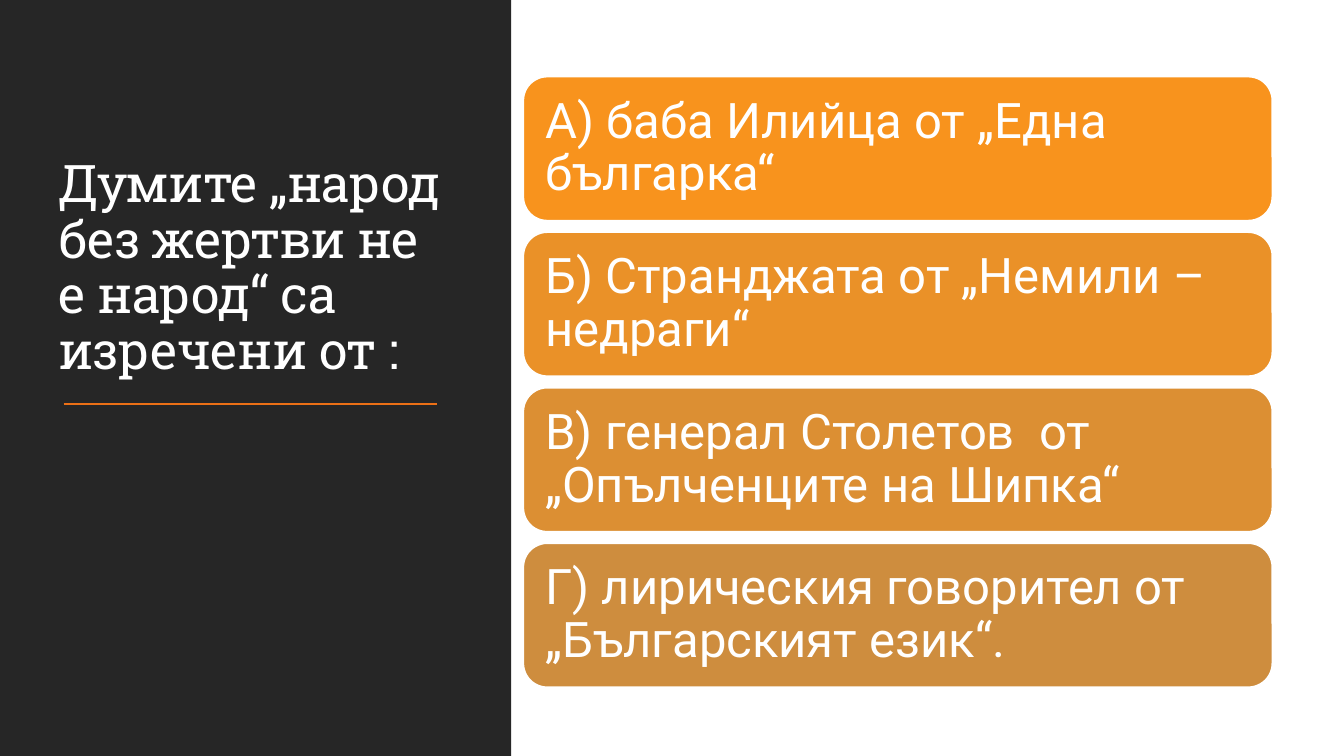
from lxml import etree
from pptx import Presentation
from pptx.dml.color import RGBColor
from pptx.enum.shapes import MSO_CONNECTOR as Connector, MSO_SHAPE as Shape
from pptx.enum.text import MSO_ANCHOR as Anchor, PP_ALIGN as Align
from pptx.oxml.ns import qn
from pptx.util import Inches, Pt

WHITE = RGBColor(0xFF, 0xFF, 0xFF)
CHARCOAL = RGBColor(0x26, 0x26, 0x26)
ORANGE = RGBColor(0xEC, 0x70, 0x16)

QUESTION = "Думите „народ без жертви не е народ“ са изречени от :"
ANSWERS = [
    ("А) баба Илийца от „Една българка“", RGBColor(0xF8, 0x93, 0x1D)),
    ("Б) Странджата от „Немили – недраги“", RGBColor(0xEA, 0x91, 0x28)),
    ("В) генерал Столетов  от „Опълченците на Шипка“", RGBColor(0xDC, 0x8F, 0x33)),
    ("Г) лирическия говорител от „Българският език“.", RGBColor(0xCE, 0x8D, 0x3E)),
]
ANSWER_TOP = 0.76
ANSWER_PITCH = 1.543


def write_text(frame, text, font_name, size, anchor):
    """Fill a frame with one white, left-aligned paragraph and return its run."""
    frame.word_wrap = True
    frame.vertical_anchor = anchor
    frame.text = text
    paragraph = frame.paragraphs[0]
    paragraph.alignment = Align.LEFT
    paragraph.line_spacing = 0.9
    run = paragraph.runs[0]
    run.font.name = font_name
    run.font.size = Pt(size)
    run.font.color.rgb = WHITE
    return run


def add_panel(slide, kind, left, top, width, height, color):
    panel = slide.shapes.add_shape(
        kind, Inches(left), Inches(top), Inches(width), Inches(height))
    panel.shadow.inherit = False
    panel.fill.solid()
    panel.fill.fore_color.rgb = color
    panel.line.fill.background()
    return panel


def add_question(slide):
    question = slide.shapes.add_textbox(
        Inches(0.48), Inches(0.7), Inches(4), Inches(3.13))
    run = write_text(question.text_frame, QUESTION, "Roboto Slab", 37, Anchor.BOTTOM)
    run.font._element.set("spc", "-50")


def add_divider(slide):
    divider = slide.shapes.add_connector(
        Connector.STRAIGHT, Inches(0.63), Inches(4.01), Inches(4.33), Inches(4.01))
    divider.line.color.rgb = ORANGE
    divider.line.width = Pt(1.5)
    etree.SubElement(divider._element.spPr, qn("a:effectLst"))


def add_answer(slide, top, text, color):
    answer = add_panel(slide, Shape.ROUNDED_RECTANGLE, 5.19, top, 7.43, 1.43, color)
    answer.line.color.rgb = WHITE
    answer.line.width = Pt(1.25)
    frame = answer.text_frame
    frame.margin_left = frame.margin_right = Inches(0.15)
    frame.margin_top = frame.margin_bottom = Inches(0.15)
    write_text(frame, text, "Roboto", 35, Anchor.MIDDLE)


def main():
    presentation = Presentation()
    presentation.slide_width = Inches(13.33)
    presentation.slide_height = Inches(7.5)
    slide = presentation.slides.add_slide(presentation.slide_layouts[6])

    add_panel(slide, Shape.RECTANGLE, 0, 0, 5.07, 7.5, CHARCOAL)
    add_question(slide)
    add_divider(slide)
    for index, (text, color) in enumerate(ANSWERS):
        add_answer(slide, ANSWER_TOP + index * ANSWER_PITCH, text, color)

    presentation.save("out.pptx")


if __name__ == "__main__":
    main()
